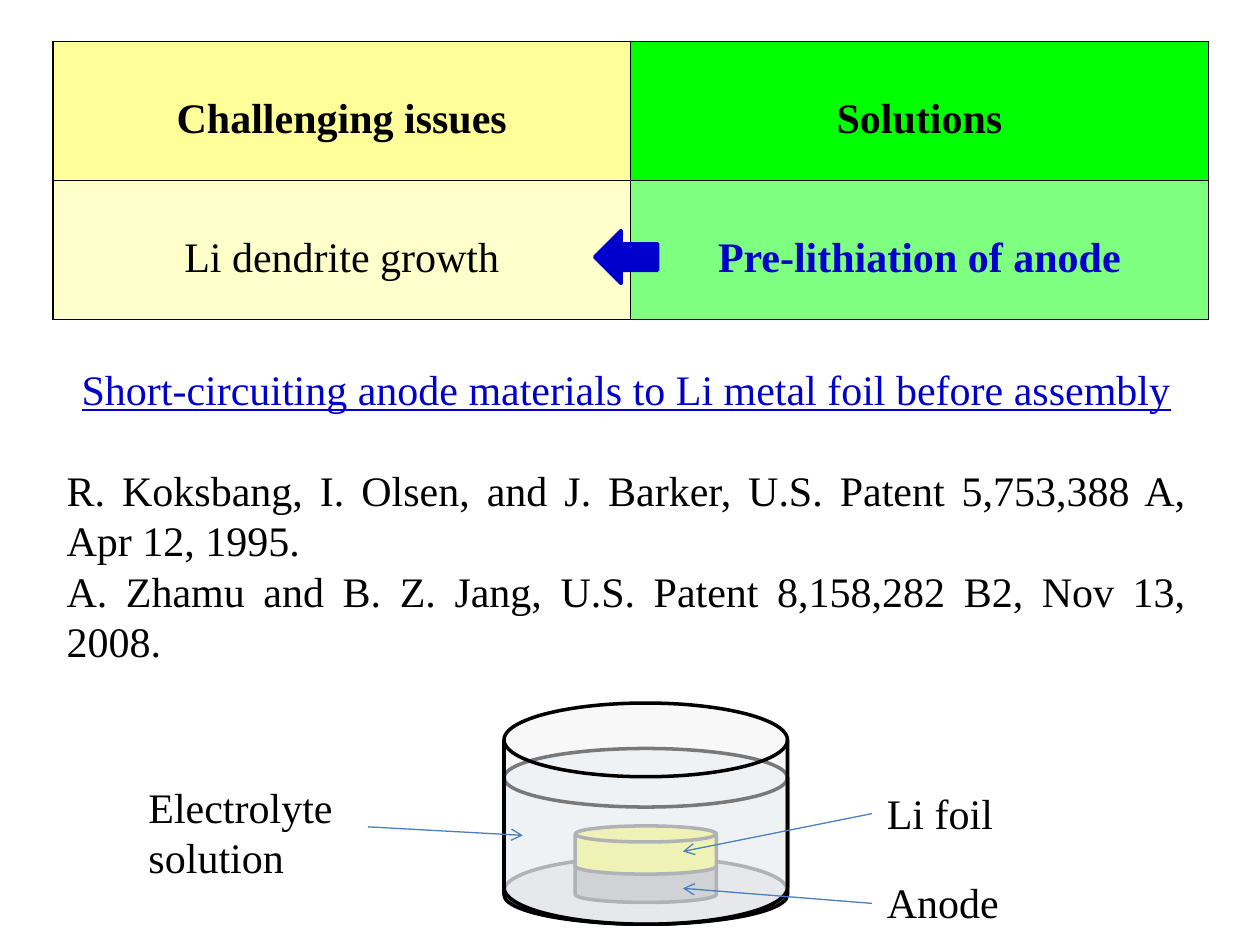
from lxml import etree
from pptx import Presentation
from pptx import util as u
from pptx.dml.color import RGBColor
from pptx.enum import shapes, text
from pptx.oxml import ns

COLORS = {
    "black": "000000", "blue": "0000CC", "yellow": "FFFF99", "green": "00FF00",
    "base": "D9D9D9", "anode": "808080", "foil": "FFFF00",
    "liquid": "DCE6F2", "glass": "F2F2F2", "pointer": "4B7EBC",
}
FONT, SIZE = "Times New Roman", 24
ALIGN = text.PP_ALIGN
PRESET = shapes.MSO_SHAPE


def rgb(name):
    return RGBColor.from_string(COLORS[name])


class SlideBuilder:
    """Draws on one slide; lengths are percentages of its width and height."""

    def __init__(self, prs):
        self.prs = prs
        self.s = prs.slides.add_slide(prs.slide_layouts[6])

    def x(self, share):
        return round(self.prs.slide_width * share / 100)

    def y(self, share):
        return round(self.prs.slide_height * share / 100)

    def box(self, left, top, width, height):
        return self.x(left), self.y(top), self.x(width), self.y(height)

    def fill(self, fill, color, alpha=None):
        fill.solid()
        fill.fore_color.rgb = rgb(color)
        if alpha is not None:
            clr = fill._xPr.find(ns.qn("a:solidFill"))[0]
            etree.SubElement(clr, ns.qn("a:alpha"), val=str(alpha * 1000))

    def style(self, p, content, color="black", align=ALIGN.LEFT, bold=False, underline=False):
        p.text = content
        p.alignment = align
        f = p.font
        f.name, f.size, f.bold, f.underline = FONT, u.Pt(SIZE), bold, underline
        f.color.rgb = rgb(color)

    def text(self, area, *paragraphs):
        """Each paragraph is a dict of style() arguments, with an optional gap before it."""
        tf = self.s.shapes.add_textbox(*self.box(*area)).text_frame
        tf.word_wrap = True
        tf.auto_size = text.MSO_AUTO_SIZE.SHAPE_TO_FIT_TEXT
        for i, options in enumerate(paragraphs):
            p = tf.add_paragraph() if i else tf.paragraphs[0]
            options = dict(options)
            p.space_before = u.Pt(options.pop("gap", 0))
            self.style(p, **options)

    def shape(self, preset, area, color, line="black", alpha=None):
        sp = self.s.shapes.add_shape(preset, *self.box(*area))
        sp.shadow.inherit = False
        self.fill(sp.fill, color, alpha)
        sp.line.color.rgb = rgb(line)
        sp.line.width = u.Pt(2)

    def arrow(self, x1, y1, x2, y2):
        c = self.s.shapes.add_connector(
            shapes.MSO_CONNECTOR.STRAIGHT, self.x(x1), self.y(y1), self.x(x2), self.y(y2))
        c.line.color.rgb = rgb("pointer")
        c.line.width = u.Pt(0.75)
        etree.SubElement(c.line._get_or_add_ln(), ns.qn("a:tailEnd"), type="arrow")
        etree.SubElement(c._element.spPr, ns.qn("a:effectLst"))

    def borders(self, cell):
        tc_pr = cell._tc.get_or_add_tcPr()
        for i, side in enumerate(("lnL", "lnR", "lnT", "lnB")):
            ln = etree.Element(ns.qn(f"a:{side}"), w=str(u.Pt(1)))
            solid = etree.SubElement(ln, ns.qn("a:solidFill"))
            etree.SubElement(solid, ns.qn("a:srgbClr"), val=COLORS["black"])
            tc_pr.insert(i, ln)

    def table(self, area, rows):
        table = self.s.shapes.add_table(len(rows), len(rows[0]), *self.box(*area)).table
        for r, row in enumerate(rows):
            for c, (content, color, bold, fill, alpha) in enumerate(row):
                cell = table.cell(r, c)
                cell.margin_top = u.Inches(0.43)
                self.style(cell.text_frame.paragraphs[0], content, color, ALIGN.CENTER, bold)
                self.fill(cell.fill, fill, alpha)
                self.borders(cell)


def main():
    prs = Presentation()
    prs.slide_width, prs.slide_height = u.Inches(10), u.Inches(7.5)
    b = SlideBuilder(prs)

    b.table((4.2, 4.4, 91.7, 29.4), [
        [("Challenging issues", "black", True, "yellow", None),
         ("Solutions", "black", True, "green", None)],
        [("Li dendrite growth", "black", False, "yellow", 50),
         ("Pre-lithiation of anode", "blue", True, "green", 50)],
    ])
    b.text(
        (4.3, 37.8, 90.8, 33.6),
        dict(content="Short-circuiting anode materials to Li metal foil before assembly",
             color="blue", align=ALIGN.CENTER, underline=True),
        dict(content="R. Koksbang, I. Olsen, and J. Barker, U.S. Patent 5,753,388 A, Apr 12, 1995.",
             align=ALIGN.JUSTIFY, gap=28.8),
        dict(content="A. Zhamu and B. Z. Jang, U.S. Patent 8,158,282 B2, Nov 13, 2008.",
             align=ALIGN.JUSTIFY),
    )

    # Glass cell, back to front: everything in it shares a centre line
    centre, floor = 51.25, 97.8
    disk = PRESET.FLOWCHART_MAGNETIC_DISK
    for preset, width, height, bottom, color, alpha in [
        (PRESET.OVAL, 22.5, 7.1, floor, "base", None),
        (disk, 11.2, 5.1, 95.5, "anode", None),
        (disk, 11.2, 5.1, 92.5, "foil", None),
        (disk, 22.5, 18.6, floor, "liquid", 50),
        (disk, 22.5, 23.4, floor, "glass", 50),
    ]:
        b.shape(preset, (centre - width / 2, bottom - height, width, height), color, alpha=alpha)

    for label, area, pointer in [
        ("Li foil", (69.4, 82.7, 27.5, 6.7), (69.2, 86.1, 54.2, 90.1)),
        ("Anode", (69.4, 92.1, 27.5, 6.7), (69.2, 95.6, 54.2, 94)),
        ("Electrolyte solution", (10.8, 82, 18.5, 12.1), (29.2, 87.5, 41.5, 88.4)),
    ]:
        b.arrow(*pointer)
        b.text(area, dict(content=label))

    b.shape(PRESET.LEFT_ARROW, (47.2, 24.4, 5, 5.6), "blue", line="blue")
    prs.save("out.pptx")


if __name__ == "__main__":
    main()
